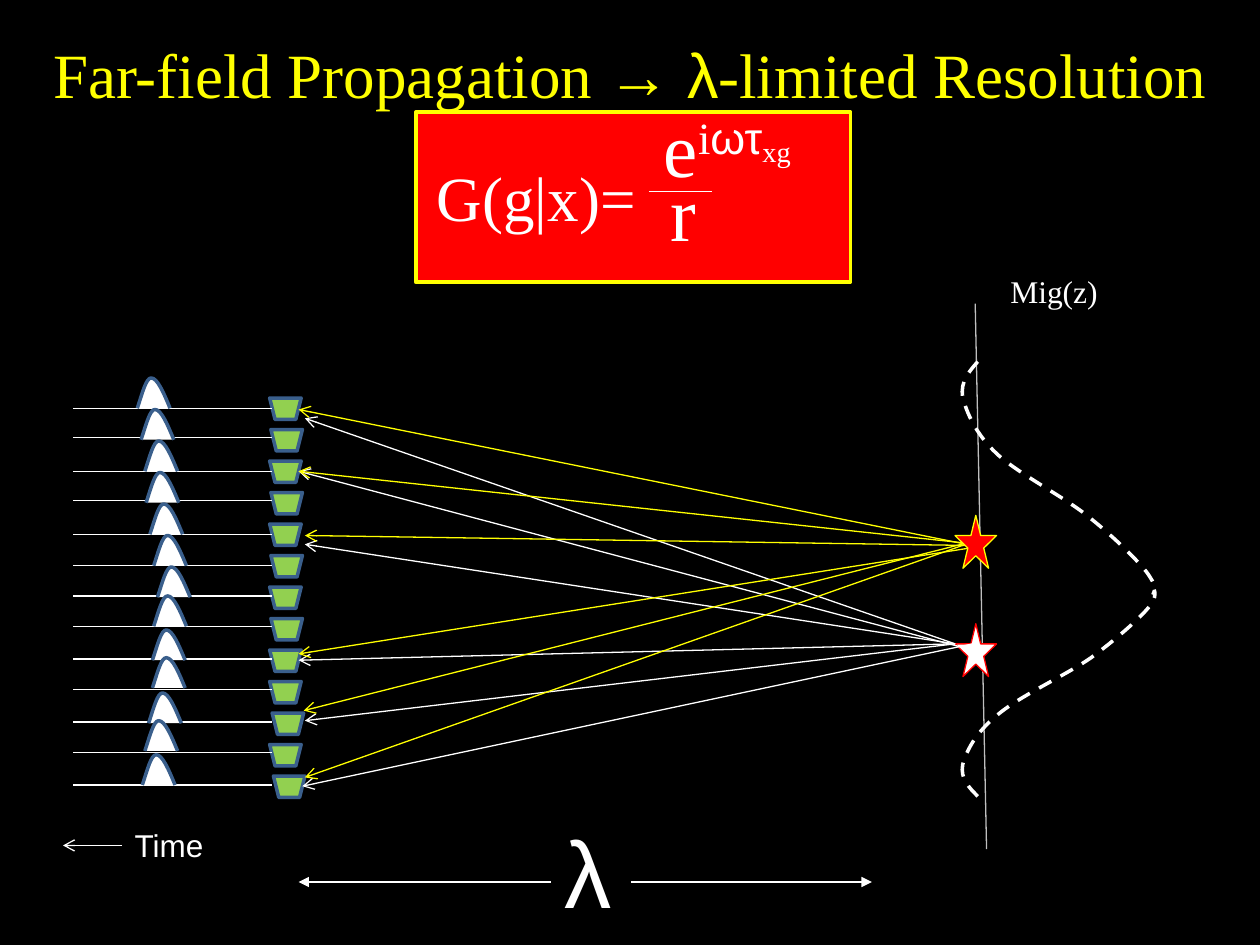
from dataclasses import dataclass
from typing import NamedTuple, Optional

import lxml.etree
import pptx
import pptx.dml.color
import pptx.enum.dml
import pptx.enum.shapes
import pptx.enum.text
import pptx.oxml.ns
import pptx.util

PX = 9144  # EMU per px, 100 px to the inch
SHAPES = pptx.enum.shapes.MSO_SHAPE
ANCHOR = pptx.enum.text.MSO_ANCHOR
ALIGN = pptx.enum.text.PP_ALIGN
FIT = pptx.enum.text.MSO_AUTO_SIZE
qn = pptx.oxml.ns.qn


@dataclass(frozen=True)
class Theme:
    black: str = "000000"
    white: str = "FFFFFF"
    yellow: str = "FFFF00"
    red: str = "FF0000"
    green: str = "92D050"
    blue: str = "3A5F8C"
    grey: str = "BFBFBF"
    serif: str = "Times New Roman"
    sans: str = "Arial"
    label: int = 18
    index: int = 28
    heading: int = 36
    fraction: int = 44
    symbol: int = 54
    thin: float = 0.75
    thick: float = 2


THEME = Theme()


class Box(NamedTuple):
    left: int
    top: int
    width: int
    height: int


class Run(NamedTuple):
    text: str
    size: int
    font: str = THEME.serif
    color: str = THEME.white
    raised: bool = False


class Channel(NamedTuple):
    """One receiver with its recorded trace and pulse."""
    receiver_left: int
    trace_y: int
    pulse_left: int
    pulse_top: int


class Ray(NamedTuple):
    start: tuple[int, int]
    end: tuple[int, int]


class Source(NamedTuple):
    star: Box
    fill: str
    outline: str
    ray_color: str
    rays: list[Ray]


RECEIVER_TOP, RECEIVER_PITCH = 316, 25
CHANNELS = [
    Channel(214, 324, 109, 300), Channel(215, 347, 112, 325),
    Channel(214, 374, 115, 350), Channel(215, 397, 116, 375),
    Channel(214, 424, 119, 400), Channel(215, 449, 122, 425),
    Channel(214, 473, 125, 450), Channel(215, 497, 122, 473),
    Channel(214, 523, 121, 500), Channel(214, 547, 121, 522),
    Channel(216, 573, 118, 550), Channel(214, 597, 115, 572),
    Channel(217, 623, 113, 599),
]
PULSE = [(0, 24), (4, 12), (7, 0), (11, 0), (16, 0), (21, 12), (26, 24)]

LOWER_SOURCE = Source(Box(758, 495, 33, 42), THEME.white, THEME.red, THEME.white, [
    Ray((758, 511), (242, 332)), Ray((772, 516), (237, 374)),
    Ray((758, 511), (242, 432)), Ray((758, 511), (237, 524)),
    Ray((758, 511), (242, 572)), Ray((772, 511), (240, 624)),
])
UPPER_SOURCE = Source(Box(758, 409, 33, 42), THEME.red, THEME.yellow, THEME.yellow, [
    Ray((775, 432), (237, 374)), Ray((772, 433), (237, 325)),
    Ray((775, 433), (242, 425)), Ray((782, 433), (237, 519)),
    Ray((775, 429), (241, 564)), Ray((775, 429), (242, 617)),
])

MIGRATION_HALVES = [
    [(776, 287), (769, 295), (762, 303), (764, 315), (767, 327), (774, 344), (791, 360),
     (808, 376), (846, 395), (865, 411), (885, 427), (902, 444), (910, 454),
     (918, 465), (917, 468), (915, 472)],
    [(776, 632), (769, 625), (762, 618), (764, 607), (767, 596), (774, 582), (791, 568),
     (808, 553), (846, 536), (866, 522), (885, 508), (902, 493), (910, 484),
     (918, 475), (917, 471), (916, 468)],
]


def rgb(color: str) -> pptx.dml.color.RGBColor:
    return pptx.dml.color.RGBColor.from_string(color)


def paint(shape, fill: Optional[str], outline: str, width: float) -> None:
    shape.shadow.inherit = False
    if fill:
        shape.fill.solid()
        shape.fill.fore_color.rgb = rgb(fill)
    else:
        shape.fill.background()
    shape.line.color.rgb = rgb(outline)
    shape.line.width = pptx.util.Pt(width)


def add_preset(slide, preset, box: Box, fill: str, outline: str, width: float):
    shape = slide.shapes.add_shape(preset, *(n * PX for n in box))
    paint(shape, fill, outline, width)
    return shape


def add_line(slide, start: tuple[int, int], end: tuple[int, int],
             color: str = THEME.white, head: str = "", tail: str = "") -> None:
    line = slide.shapes.add_connector(
        pptx.enum.shapes.MSO_CONNECTOR.STRAIGHT, *(n * PX for n in (*start, *end)))
    line.line.color.rgb = rgb(color)
    line.line.width = pptx.util.Pt(THEME.thin)
    properties = line._element.spPr
    for tag, kind in (("a:headEnd", head), ("a:tailEnd", tail)):
        if kind:
            lxml.etree.SubElement(properties.find(qn("a:ln")), qn(tag), type=kind)
    lxml.etree.SubElement(properties, qn("a:effectLst"))


def add_curve(slide, knots: list[tuple[int, int]], fill: Optional[str], outline: str):
    """Draw a chain of cubic Bezier segments; each takes three further knots."""
    builder = slide.shapes.build_freeform(*knots[0], scale=PX)
    builder.add_line_segments(knots[3::3], close=False)
    curve = builder.convert_to_shape()
    left, top = (min(knot[axis] for knot in knots[::3]) for axis in (0, 1))
    # Turn each straight segment into a cubic one with its two control points
    for index, segment in enumerate(list(curve._element.iter(qn("a:lnTo")))):
        segment.clear()
        cubic = lxml.etree.Element(qn("a:cubicBezTo"))
        for x, y in knots[3 * index + 1:3 * index + 4]:
            lxml.etree.SubElement(cubic, qn("a:pt"), x=str(x - left), y=str(y - top))
        segment.getparent().replace(segment, cubic)
    paint(curve, fill, outline, THEME.thick)
    return curve


def write(shape, runs: list[Run], wrap: bool, align=ALIGN.LEFT, anchor=ANCHOR.TOP,
          fit=FIT.SHAPE_TO_FIT_TEXT) -> None:
    frame = shape.text_frame
    frame.word_wrap = wrap
    frame.auto_size = fit
    frame.vertical_anchor = anchor
    paragraph = frame.paragraphs[0]
    paragraph.alignment = align
    for part in runs:
        run = paragraph.add_run()
        run.text = part.text
        run.font.size = pptx.util.Pt(part.size)
        run.font.name = part.font
        run.font.color.rgb = rgb(part.color)
        if part.raised:
            run._r.get_or_add_rPr().set("baseline", "30000")


def add_label(slide, box: Box, runs: list[Run], wrap: bool = False) -> None:
    write(slide.shapes.add_textbox(*(n * PX for n in box)), runs, wrap)


def add_rays(slide, source: Source) -> None:
    for ray in source.rays:
        add_line(slide, ray.start, ray.end, source.ray_color, tail="arrow")


def add_star(slide, source: Source) -> None:
    add_preset(slide, SHAPES.STAR_5_POINT, source.star, source.fill, source.outline, THEME.thin)


def main() -> None:
    deck = pptx.Presentation()
    deck.slide_width, deck.slide_height = 1000 * PX, 750 * PX
    slide = deck.slides.add_slide(deck.slide_layouts[5])
    slide.background.fill.solid()
    slide.background.fill.fore_color.rgb = rgb(THEME.black)

    # Migration image along depth
    add_line(slide, (774, 241), (783, 674), THEME.grey)
    for half in MIGRATION_HALVES:
        curve = add_curve(slide, half, None, THEME.white)
        curve.line.dash_style = pptx.enum.dml.MSO_LINE.DASH
    add_label(slide, Box(792, 211, 90, 40), [Run("Mig(z)", THEME.label)])

    # Title
    title = slide.shapes.title
    title.left, title.top, title.width, title.height = (n * PX for n in (0, 8, 1000, 100))
    write(title, [Run("Far-field Propagation → ", THEME.heading, color=THEME.yellow),
                  Run("λ", THEME.heading, THEME.sans, THEME.yellow),
                  Run("-limited Resolution", THEME.heading, color=THEME.yellow)],
          True, ALIGN.CENTER, ANCHOR.MIDDLE, FIT.NONE)

    # Green's function
    add_preset(slide, SHAPES.RECTANGLE, Box(330, 89, 345, 135),
               THEME.red, THEME.yellow, THEME.thick)
    add_label(slide, Box(517, 75, 237, 84), [
        Run("e", THEME.fraction), Run("i", THEME.fraction, raised=True),
        Run("ωτ", THEME.fraction, THEME.sans, raised=True),
        Run("xg", THEME.index, raised=True)], wrap=True)
    add_label(slide, Box(522, 126, 237, 84), [Run("r", THEME.fraction)], wrap=True)
    add_line(slide, (515, 152), (565, 152))
    add_label(slide, Box(337, 121, 237, 71), [Run("G(g|x)=", THEME.heading)], wrap=True)

    # Wavelength span
    add_line(slide, (237, 700), (692, 700), head="triangle", tail="triangle")
    wavelength = add_preset(slide, SHAPES.RECTANGLE, Box(438, 641, 62, 101),
                            THEME.black, THEME.black, THEME.thin)
    write(wavelength, [Run("λ", THEME.symbol, THEME.sans)], False)

    # Receivers, traces and pulses
    for index, channel in enumerate(CHANNELS):
        receiver = add_preset(
            slide, SHAPES.TRAPEZOID,
            Box(channel.receiver_left, RECEIVER_TOP + index * RECEIVER_PITCH, 25, 17),
            THEME.green, THEME.blue, THEME.thick)
        receiver._element.spPr.find(qn("a:xfrm")).set("flipV", "1")
    for channel in CHANNELS:
        add_line(slide, (58, channel.trace_y), (216, channel.trace_y))
    for channel in CHANNELS:
        add_curve(slide, [(channel.pulse_left + x, channel.pulse_top + y) for x, y in PULSE],
                  THEME.white, THEME.blue)

    # Sources and their rays
    add_star(slide, LOWER_SOURCE)
    add_rays(slide, LOWER_SOURCE)
    add_rays(slide, UPPER_SOURCE)
    add_star(slide, UPPER_SOURCE)

    # Time direction
    add_label(slide, Box(97, 651, 75, 40), [Run("Time", THEME.label, THEME.sans)])
    add_line(slide, (97, 671), (50, 671), tail="arrow")

    deck.save("out.pptx")


if __name__ == "__main__":
    main()
